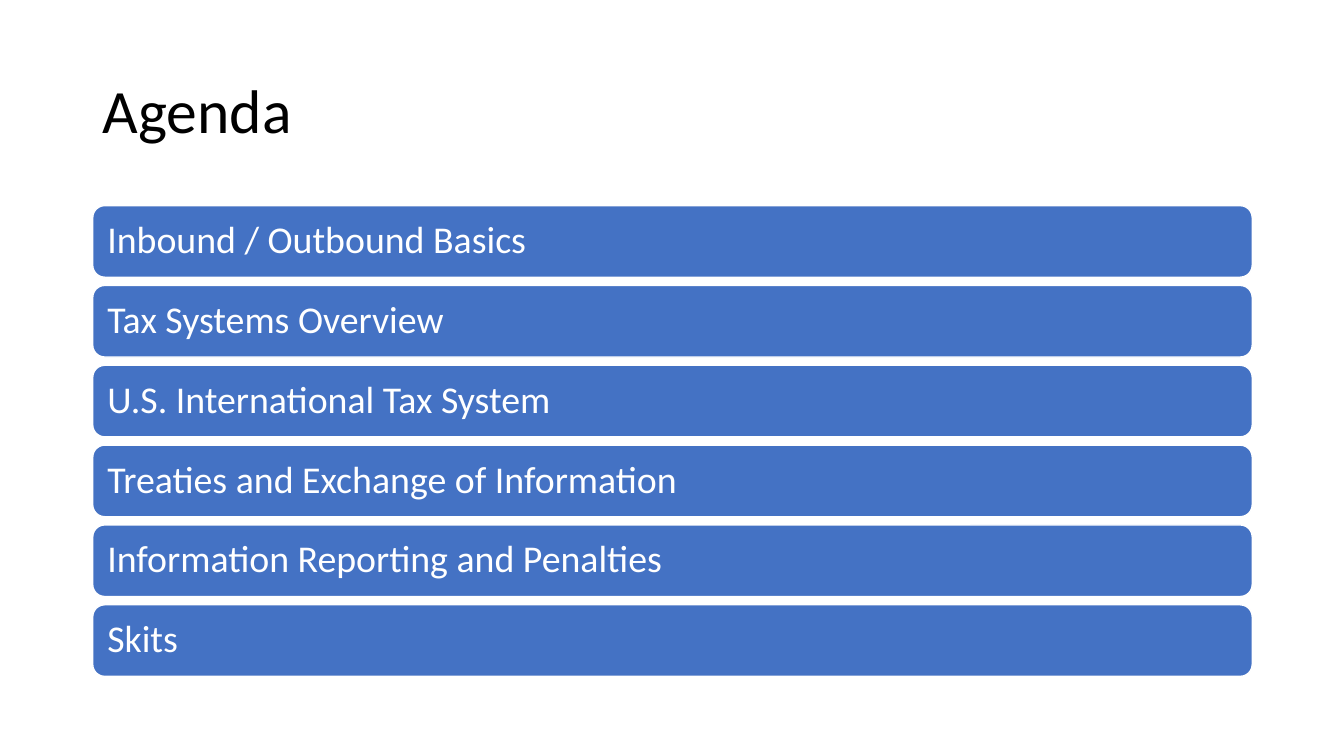
"""Build the agenda slide: a title over six equal bars."""
from pptx import Presentation
from pptx.dml.color import RGBColor
from pptx.enum.shapes import MSO_SHAPE
from pptx.enum.text import MSO_ANCHOR, PP_ALIGN
from pptx.util import Inches, Pt

ROUND = MSO_SHAPE.ROUNDED_RECTANGLE
MIDDLE = MSO_ANCHOR.MIDDLE
LEFT = PP_ALIGN.LEFT

BLUE, WHITE, BLACK = "4472C4", "FFFFFF", "000000"
EDGE, WIDTH = 0.92, 11.5
TOP, LAST, HIGH = 2.04, 6.0, 0.71
TOPICS = [
    "Inbound / Outbound Basics",
    "Tax Systems Overview",
    "U.S. International Tax System",
    "Treaties and Exchange of Information",
    "Information Reporting and Penalties",
    "Skits",
]
PITCH = (LAST - TOP) / (len(TOPICS) - 1)


def color(code):
    return RGBColor.from_string(code)


def write(shape, text, size, code):
    frame = shape.text_frame
    frame.word_wrap = True
    frame.vertical_anchor = MIDDLE
    para = frame.paragraphs[0]
    para.alignment = LEFT
    para.line_spacing = 0.9
    run = para.add_run()
    run.text = text
    run.font.name = "Calibri"
    run.font.size = Pt(size)
    run.font.color.rgb = color(code)
    return frame


deck = Presentation()
deck.slide_width, deck.slide_height = Inches(13.33), Inches(7.5)
slide = deck.slides.add_slide(deck.slide_layouts[5])

title = slide.shapes.title
title.left, title.top = Inches(EDGE), Inches(0.4)
title.width, title.height = Inches(WIDTH), Inches(1.45)
write(title, "Agenda", 44, BLACK)

for row, topic in enumerate(TOPICS):
    bar = slide.shapes.add_shape(
        ROUND, Inches(EDGE), Inches(TOP + row * PITCH), Inches(WIDTH), Inches(HIGH)
    )
    bar.shadow.inherit = False
    bar.fill.solid()
    bar.fill.fore_color.rgb = color(BLUE)
    bar.line.color.rgb = color(WHITE)
    bar.line.width = Pt(1)
    frame = write(bar, topic, 27, WHITE)
    frame.margin_left = frame.margin_right = Inches(0.11)

deck.save("out.pptx")
